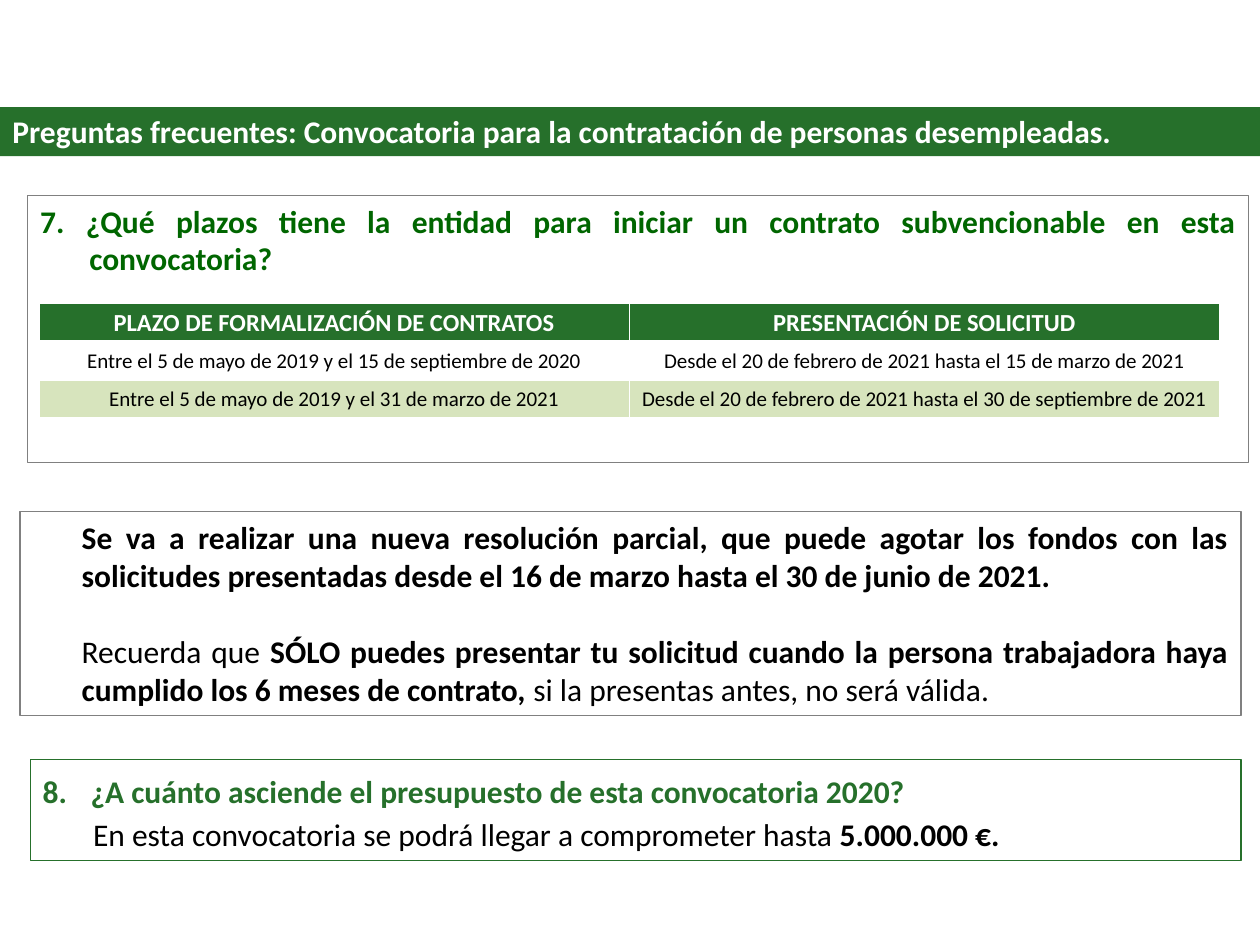
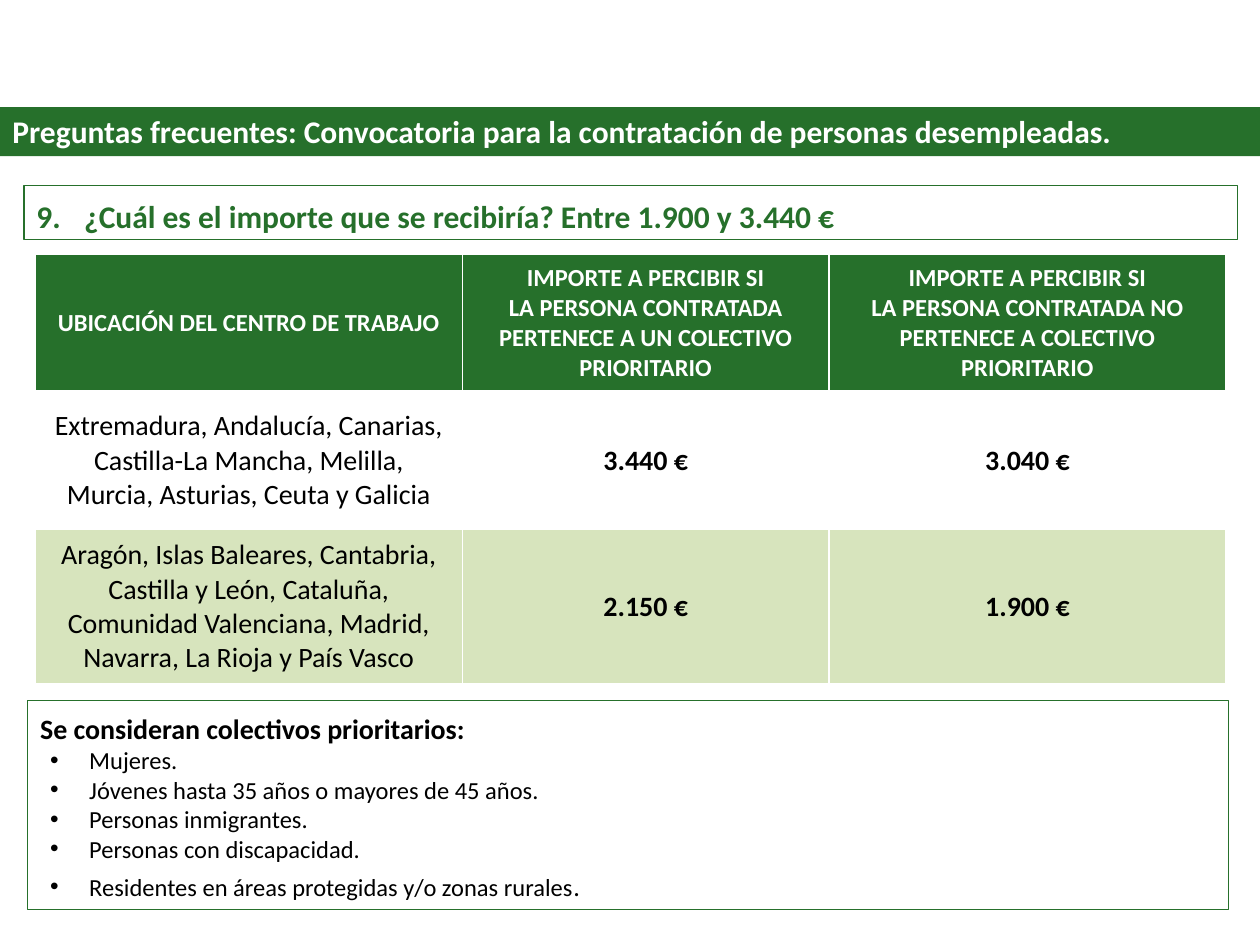
from lxml.etree import SubElement
from pptx import Presentation
from pptx.dml.color import RGBColor
from pptx.enum.shapes import MSO_SHAPE
from pptx.enum.text import MSO_ANCHOR, PP_ALIGN
from pptx.oxml.ns import qn
from pptx.util import Inches, Pt

GREEN, DARK_GREEN, PALE_GREEN = "26702B", "006600", "D7E4BD"
GREY, BLACK, WHITE = "808080", "000000", "FFFFFF"
FONT = "Calibri"

TITLE = "Preguntas frecuentes: Convocatoria para la contratación de personas desempleadas."
HEADING = {"size": 18, "bold": True, "color": GREEN}
BODY = {"size": 18, "bold": False, "color": BLACK}
STRONG = BODY | {"bold": True}
ITEM = BODY | {"size": 14}
HANGING = {"margin": 0.39, "indent": -0.39}
NUMBERED = {"margin": 0.38, "indent": -0.38, "line_spacing": 1.15}
BULLETED = {"margin": 0.39, "indent": -0.31, "bullet": "•"}

PRIORITY_GROUPS = [
    "Mujeres.",
    "Jóvenes hasta 35 años o mayores de 45 años.",
    "Personas inmigrantes.",
    "Personas con discapacidad.",
]

SLIDES = [
    {
        "boxes": [
            {"place": (0.22, 1.55, 9.69, 2.12), "line": GREY, "paragraphs": [
                ([("7. ¿Qué plazos tiene la entidad para iniciar un contrato subvencionable "
                   "en esta convocatoria?", HEADING | {"color": DARK_GREEN})], HANGING),
            ]},
            {"place": (0.16, 4.06, 9.69, 1.62), "line": GREY, "paragraphs": [
                ([("Se va a realizar una nueva resolución parcial, que puede agotar los fondos "
                   "con las solicitudes presentadas desde el 16 de marzo hasta el 30 de junio "
                   "de 2021.", STRONG)], {"margin": 0.39}),
                ([("Recuerda que ", BODY),
                  ("SÓLO puedes presentar tu solicitud cuando la persona trabajadora haya "
                   "cumplido los 6 meses de contrato, ", STRONG),
                  ("si la presentas antes, no será válida.", BODY)],
                 {"margin": 0.39, "space_before": Pt(22)}),
            ]},
            {"place": (0.24, 6.03, 9.61, 0.8), "line": GREEN, "paragraphs": [
                ([("¿A cuánto asciende el presupuesto de esta convocatoria 2020?", HEADING)],
                 NUMBERED | {"number": 8}),
                ([("En esta convocatoria se podrá llegar a comprometer hasta ", BODY),
                  ("5.000.000 €.", STRONG)], {"margin": 0.4, "line_spacing": 1.15}),
            ]},
        ],
        "table": {
            "corner": (0.31, 2.41),
            "widths": [9.37 / 2] * 2,
            "heights": [0.91 / 3] * 3,
            "margins": (0.07, 0),
            "size": 12,
            "bold_from": 2,
            "rows": [
                ["PLAZO DE FORMALIZACIÓN DE CONTRATOS", "PRESENTACIÓN DE SOLICITUD"],
                ["Entre el 5 de mayo de 2019 y el 15 de septiembre de 2020",
                 "Desde el 20 de febrero de 2021 hasta el 15 de marzo de 2021"],
                ["Entre el 5 de mayo de 2019 y el 31 de marzo de 2021",
                 "Desde el 20 de febrero de 2021 hasta el 30 de septiembre de 2021"],
            ],
        },
    },
    {
        "boxes": [
            {"place": (0.19, 1.47, 9.63, 0.43), "line": GREEN, "paragraphs": [
                ([("¿Cuál es el importe que se recibiría? Entre 1.900 y 3.440 €", HEADING)],
                 NUMBERED | {"number": 9}),
            ]},
            {"place": (0.22, 5.56, 9.53, 1.66), "line": GREEN, "paragraphs": [
                ([("Se consideran colectivos prioritarios:", STRONG | {"size": 16})],
                 {"line_spacing": 1.15}),
                *[([(group, ITEM)], BULLETED) for group in PRIORITY_GROUPS],
                ([("Residentes en áreas protegidas y/o zonas rurales", ITEM),
                  (".", ITEM | {"size": 15})], BULLETED | {"space_before": Pt(4)}),
            ]},
        ],
        "table": {
            "corner": (0.28, 2.02),
            "widths": [3.39, 2.91, 3.15],
            "heights": [1.09, 1.09, 1.23],
            "margins": (0.1, 0.05),
            "size": 16,
            "bold_from": 1,
            "rows": [
                ["UBICACIÓN DEL CENTRO DE TRABAJO",
                 "IMPORTE A PERCIBIR SI\n"
                 "LA PERSONA CONTRATADA PERTENECE A UN COLECTIVO PRIORITARIO",
                 "IMPORTE A PERCIBIR SI\n"
                 "LA PERSONA CONTRATADA NO PERTENECE A COLECTIVO PRIORITARIO"],
                ["Extremadura, Andalucía, Canarias, Castilla-La Mancha, Melilla, "
                 "Murcia, Asturias, Ceuta y Galicia", "3.440 €", "3.040 €"],
                ["Aragón, Islas Baleares, Cantabria, Castilla y León, Cataluña, "
                 "Comunidad Valenciana, Madrid, Navarra, La Rioja y País Vasco",
                 "2.150 €", "1.900 €"],
            ],
        },
    },
]


def rgb(color):
    return RGBColor.from_string(color)


def add_span(para, text, style):
    span = para.add_run()
    span.text = text
    formats = {"name": FONT, "size": Pt(style["size"]), "bold": style["bold"]}
    for name, value in formats.items():
        setattr(span.font, name, value)
    span.font.color.rgb = rgb(style["color"])


def set_marker(properties, layout):
    if "number" in layout:
        color = SubElement(properties, qn("a:buClr"))
        SubElement(color, qn("a:srgbClr"), val=GREEN)
        SubElement(properties, qn("a:buFont"), typeface="+mj-lt")
        SubElement(properties, qn("a:buAutoNum"), type="arabicPeriod",
                   startAt=str(layout["number"]))
    elif "bullet" in layout:
        SubElement(properties, qn("a:buFont"), typeface="Arial")
        SubElement(properties, qn("a:buChar"), char=layout["bullet"])


def fill_text(frame, paragraphs):
    frame.word_wrap = True
    frame.vertical_anchor = MSO_ANCHOR.TOP
    for index, (spans, layout) in enumerate(paragraphs):
        para = frame.add_paragraph() if index else frame.paragraphs[0]
        properties = para._p.get_or_add_pPr()
        properties.set("marL", str(Inches(layout.get("margin", 0))))
        properties.set("indent", str(Inches(layout.get("indent", 0))))
        set_marker(properties, layout)
        para.alignment = layout.get("alignment", PP_ALIGN.JUSTIFY)
        for name in ("line_spacing", "space_before"):
            if name in layout:
                setattr(para, name, layout[name])
        for text, style in spans:
            add_span(para, text, style)


def add_box(page, place, fill=None, line=None):
    box = page.shapes.add_shape(MSO_SHAPE.RECTANGLE, *map(Inches, place))
    box.shadow.inherit = False
    if fill:
        box.fill.solid()
        box.fill.fore_color.rgb = rgb(fill)
    else:
        box.fill.background()
    if line:
        box.line.color.rgb = rgb(line)
        box.line.width = Pt(0.75)
    else:
        box.line.fill.background()
    return box


def add_title_band(page):
    add_box(page, (0, 0.85, 10, 0.39), fill=GREEN)
    title = page.shapes.add_textbox(*map(Inches, (0, 0.84, 10.12, 0.4)))
    fill_text(title.text_frame, [([(TITLE, HEADING | {"color": WHITE})],
                                  {"alignment": PP_ALIGN.LEFT})])


def set_borders(cell, row):
    widths = {"lnL": 1, "lnR": 1, "lnT": 3 if row == 1 else 1, "lnB": 1 if row else 3}
    properties = cell._tc.get_or_add_tcPr()
    for side, width in widths.items():
        border = SubElement(properties, qn(f"a:{side}"), w=str(Pt(width)))
        SubElement(SubElement(border, qn("a:solidFill")), qn("a:srgbClr"), val=WHITE)


def add_grid(page, data):
    widths, heights = data["widths"], data["heights"]
    place = (*data["corner"], sum(widths), sum(heights))
    table = page.shapes.add_table(len(heights), len(widths), *map(Inches, place)).table
    for column, width in zip(table.columns, widths):
        column.width = Inches(width)
    side, edge = map(Inches, data["margins"])
    margins = {"margin_left": side, "margin_right": side,
               "margin_top": edge, "margin_bottom": edge}
    for row, texts in enumerate(data["rows"]):
        table.rows[row].height = Inches(heights[row])
        for column, text in enumerate(texts):
            cell = table.cell(row, column)
            for name, value in margins.items():
                setattr(cell, name, value)
            set_borders(cell, row)
            cell.fill.solid()
            cell.fill.fore_color.rgb = rgb((GREEN, WHITE, PALE_GREEN)[row])
            style = {"size": data["size"] if row else 14,
                     "bold": row == 0 or column >= data["bold_from"],
                     "color": BLACK if row else WHITE}
            fill_text(cell.text_frame, [([(part, style)], {"alignment": PP_ALIGN.CENTER})
                                        for part in text.split("\n")])
            cell.vertical_anchor = MSO_ANCHOR.MIDDLE


def main():
    deck = Presentation()
    deck.slide_width, deck.slide_height = Inches(10), Inches(7.5)
    for content in SLIDES:
        page = deck.slides.add_slide(deck.slide_layouts[6])
        add_title_band(page)
        for item in content["boxes"]:
            box = add_box(page, item["place"], line=item["line"])
            fill_text(box.text_frame, item["paragraphs"])
        add_grid(page, content["table"])
    deck.save("out.pptx")


if __name__ == "__main__":
    main()
